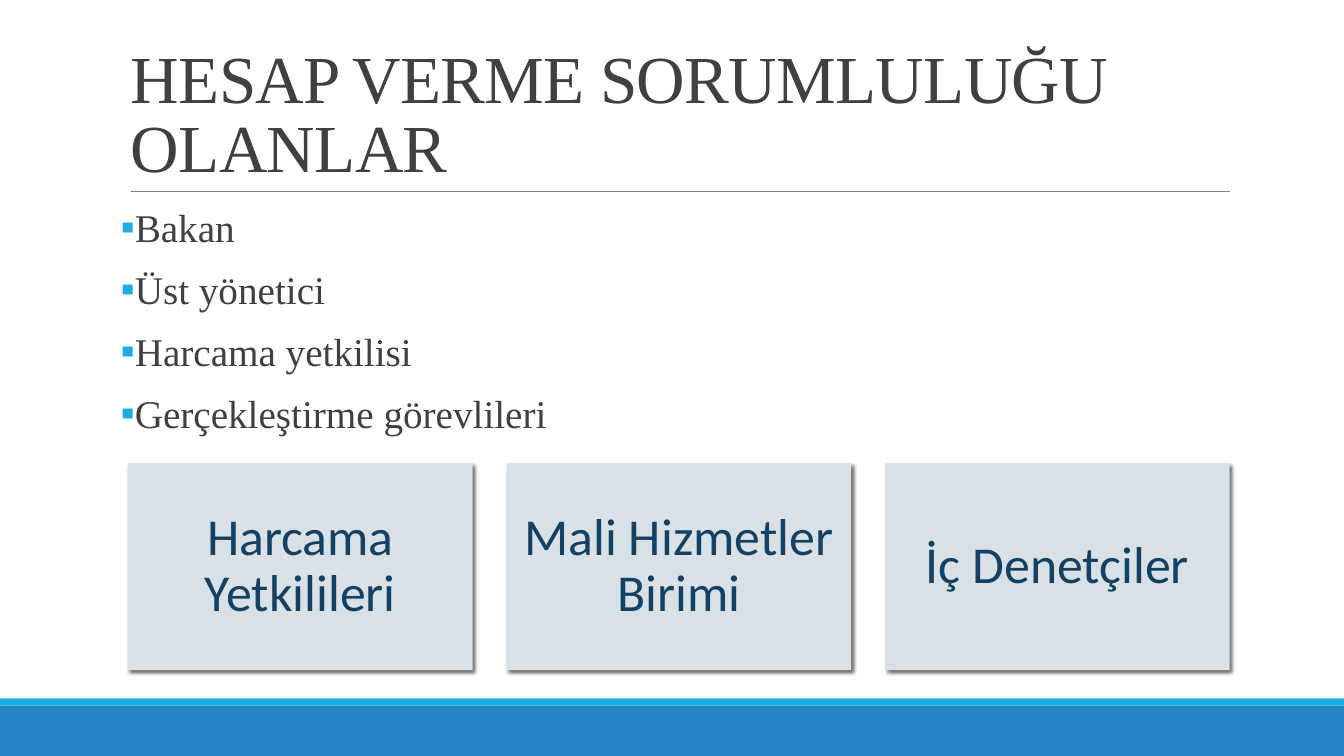
from lxml import etree
from pptx import Presentation
from pptx.dml.color import RGBColor
from pptx.enum.shapes import MSO_CONNECTOR, MSO_SHAPE
from pptx.enum.text import MSO_ANCHOR, PP_ALIGN
from pptx.oxml.ns import qn
from pptx.util import Cm, Pt

RECTANGLE = MSO_SHAPE.RECTANGLE
STRAIGHT = MSO_CONNECTOR.STRAIGHT
TOP, MIDDLE, BOTTOM = MSO_ANCHOR.TOP, MSO_ANCHOR.MIDDLE, MSO_ANCHOR.BOTTOM
CENTER = PP_ALIGN.CENTER

SLIDE_WIDTH, SLIDE_HEIGHT = 33.87, 19.05
SERIF, SANS = "Times New Roman", "Calibri"
BLUE, CYAN, GRAY, DARK = "2683C6", "1CADE4", "808080", "404040"
CARD_FILL, CARD_TEXT = "D9E0E6", "134163"

TITLE = "HESAP VERME SORUMLULUĞU OLANLAR"
RESPONSIBLE = ["Bakan", "Üst yönetici", "Harcama yetkilisi", "Gerçekleştirme görevlileri"]
UNITS = ["Harcama Yetkilileri", "Mali Hizmetler Birimi", "İç Denetçiler"]


def color(value):
    return RGBColor.from_string(value)


def add_child(parent, tag, **attributes):
    return etree.SubElement(parent, qn(tag), attributes)


def add_rectangle(slide, left, top, width, height, fill):
    shape = slide.shapes.add_shape(RECTANGLE, Cm(left), Cm(top), Cm(width), Cm(height))
    shape.shadow.inherit = False
    shape.fill.solid()
    shape.fill.fore_color.rgb = color(fill)
    shape.line.fill.background()
    return shape


def set_frame(shape, anchor, horizontal, vertical):
    frame = shape.text_frame
    frame.word_wrap = True
    frame.vertical_anchor = anchor
    frame.margin_left = frame.margin_right = Cm(horizontal)
    frame.margin_top = frame.margin_bottom = Cm(vertical)
    return frame


def add_run(paragraph, text, size, font, text_color):
    run = paragraph.add_run()
    run.text = text
    run.font.size = Pt(size)
    run.font.name = font
    run.font.color.rgb = color(text_color)
    return run


def add_square_bullet(paragraph):
    properties = paragraph._p.get_or_add_pPr()
    indent = Cm(0.25)
    properties.set("marL", str(indent))
    properties.set("indent", str(-indent))
    bullet_color = add_child(properties, "a:buClr")
    add_child(bullet_color, "a:srgbClr", val=CYAN)
    add_child(properties, "a:buFont", typeface=SANS)
    add_child(properties, "a:buChar", char="▪")


def add_drop_shadow(shape):
    effects = shape._element.spPr.find(qn("a:effectLst"))
    shadow = add_child(effects, "a:outerShdw", blurRad=str(Pt(3)), dist=str(Pt(2)),
                       dir="2700000", algn="tl", rotWithShape="0")
    black = add_child(shadow, "a:srgbClr", val="000000")
    add_child(black, "a:alpha", val="60000")


def add_footer_bands(slide, left, top, width, height):
    stripe = 0.18
    add_rectangle(slide, left, top + stripe, width, height - stripe, BLUE)
    add_rectangle(slide, left, top, width, stripe, CYAN)


def add_title(slide, left, top, width, height):
    """Place the title at the bottom of its box, with a rule below it."""
    inset, bottom = 0.25, top + height
    rule = slide.shapes.add_connector(STRAIGHT, Cm(left + inset), Cm(bottom),
                                      Cm(left + width), Cm(bottom))
    rule.line.color.rgb = color(GRAY)
    rule.line.width = Pt(0.5)
    add_child(rule._element.spPr, "a:effectLst")

    box = slide.shapes.add_textbox(Cm(left), Cm(top), Cm(width), Cm(height))
    paragraph = set_frame(box, BOTTOM, inset, 0.13).paragraphs[0]
    paragraph.line_spacing = 0.85
    run = add_run(paragraph, TITLE, 48, SERIF, DARK)
    run.font._element.set("spc", "-50")


def add_bullet_list(slide, left, top, width, height):
    box = slide.shapes.add_textbox(Cm(left), Cm(top), Cm(width), Cm(height))
    frame = set_frame(box, TOP, 0, 0.13)
    for index, text in enumerate(RESPONSIBLE):
        paragraph = frame.add_paragraph() if index else frame.paragraphs[0]
        add_square_bullet(paragraph)
        paragraph.line_spacing = 0.9
        paragraph.space_before = Pt(12 if index else 0)
        paragraph.space_after = Pt(2)
        add_run(paragraph, text, 28, SERIF, DARK)


def add_unit_cards(slide, left, top, width, height):
    gap = 0.86
    card_width = (width - gap * (len(UNITS) - 1)) / len(UNITS)
    for index, unit in enumerate(UNITS):
        card_left = left + index * (card_width + gap)
        card = add_rectangle(slide, card_left, top, card_width, height, CARD_FILL)
        add_drop_shadow(card)
        paragraph = set_frame(card, MIDDLE, 0.37, 0.37).paragraphs[0]
        paragraph.alignment = CENTER
        paragraph.line_spacing = 0.9
        add_run(paragraph, unit, 37, SANS, CARD_TEXT)


def main():
    presentation = Presentation()
    presentation.slide_width = Cm(SLIDE_WIDTH)
    presentation.slide_height = Cm(SLIDE_HEIGHT)
    slide = presentation.slides.add_slide(presentation.slide_layouts[6])
    add_footer_bands(slide, 0, 17.6, SLIDE_WIDTH, SLIDE_HEIGHT - 17.6)
    add_title(slide, 3.05, 0.79, 27.94, 4.03)
    add_bullet_list(slide, 3.05, 5.13, 27.94, 11.18)
    add_unit_cards(slide, 3.23, 11.68, 27.76, 5.21)
    presentation.save("out.pptx")


if __name__ == "__main__":
    main()
